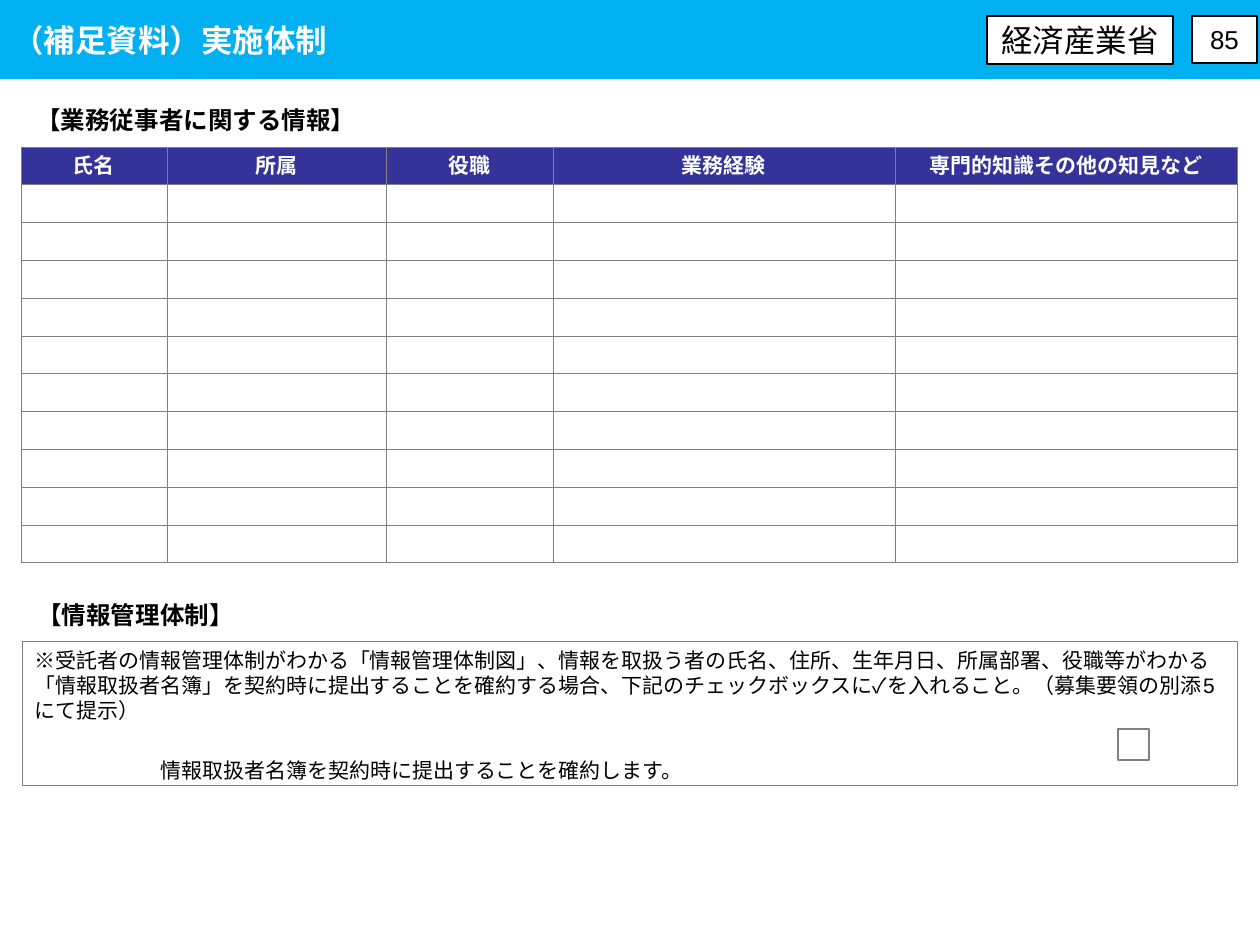
from lxml.etree import SubElement
from pptx import Presentation
from pptx.dml.color import RGBColor
from pptx.enum.shapes import MSO_SHAPE
from pptx.enum.text import MSO_ANCHOR, PP_ALIGN
from pptx.oxml.ns import qn
from pptx.util import Pt

COLORS = {
    "band": "00B0F0",
    "header": "333399",
    "border": "808080",
    "white": "FFFFFF",
    "black": "000000",
}
GOTHIC = "Noto Sans CJK JP"
HEADERS = ["氏名", "所属", "役職", "業務経験", "専門的知識その他の知見など"]
COLUMN_WIDTHS = [146, 219, 167, 342, 343]
STAFF_ROWS = 10
PLEDGE_NOTE = (
    "※受託者の情報管理体制がわかる「情報管理体制図」、情報を取扱う者の氏名、住所、生年月日、"
    "所属部署、役職等がわかる「情報取扱者名簿」を契約時に提出することを確約する場合、"
    "下記のチェックボックスに✓を入れること。（募集要領の別添5にて提示）"
)
PLEDGE = "情報取扱者名簿を契約時に提出することを確約します。"


def px(n):
    return round(n * 914400 / 126)


def rgb(name):
    return RGBColor.from_string(COLORS[name])


def write(p, text, size=12, font="Arial", color="black", bold=False,
          align=PP_ALIGN.LEFT, before=0, indent=0):
    p.alignment = align
    p.space_before = Pt(before)
    if indent:
        p._p.get_or_add_pPr().set("marL", str(px(indent)))
    r = p.add_run()
    r.text = text
    r.font.size = Pt(size)
    r.font.name = font
    r.font.bold = bold
    r.font.color.rgb = rgb(color)
    SubElement(r._r.get_or_add_rPr(), qn("a:ea"), typeface=font)


class SlideBuilder:
    def __init__(self, prs):
        self.s = prs.slides.add_slide(prs.slide_layouts[6])

    def box(self, x, y, w, h, fill=None, line=None, weight=0.75,
            anchor=MSO_ANCHOR.MIDDLE):
        sp = self.s.shapes.add_shape(MSO_SHAPE.RECTANGLE, px(x), px(y), px(w), px(h))
        sp.shadow.inherit = False
        if fill:
            sp.fill.solid()
            sp.fill.fore_color.rgb = rgb(fill)
        else:
            sp.fill.background()
        if line:
            sp.line.color.rgb = rgb(line)
            sp.line.width = Pt(weight)
        else:
            sp.line.fill.background()
        tf = sp.text_frame
        tf.word_wrap = True
        tf.vertical_anchor = anchor
        return tf

    def heading(self, text, x, y, w, h):
        tf = self.s.shapes.add_textbox(px(x), px(y), px(w), px(h)).text_frame
        tf.word_wrap = True
        write(tf.paragraphs[0], text, size=14, font=GOTHIC, bold=True)

    def table(self, x, y, h, headers, widths, body_rows):
        rows = body_rows + 1
        table = self.s.shapes.add_table(
            rows, len(headers), px(x), px(y), px(sum(widths)), px(h)).table
        for column, width in zip(table.columns, widths):
            column.width = px(width)
        for i, row in enumerate(table.rows):
            row.height = px(h) // rows
            for cell, label in zip(row.cells, headers):
                self.cell(cell, label if i == 0 else "")

    def cell(self, cell, label):
        cell.vertical_anchor = MSO_ANCHOR.MIDDLE
        cell.margin_top = cell.margin_bottom = px(2)
        p = cell.text_frame.paragraphs[0]
        tcPr = cell._tc.get_or_add_tcPr()
        for side in ("lnL", "lnR", "lnT", "lnB"):
            ln = SubElement(tcPr, qn(f"a:{side}"), w=str(Pt(0.5)))
            fill = SubElement(ln, qn("a:solidFill"))
            SubElement(fill, qn("a:srgbClr"), val=COLORS["border"])
        if label:
            cell.fill.solid()
            cell.fill.fore_color.rgb = rgb("header")
            write(p, label, color="white", bold=True, align=PP_ALIGN.CENTER)
        else:
            cell.fill.background()
            SubElement(p._p, qn("a:endParaRPr"), sz="1200")


def main():
    prs = Presentation()
    prs.slide_width, prs.slide_height = px(1260), px(945)
    b = SlideBuilder(prs)

    title = b.box(0, 0, 1260, 79, fill="band")
    write(title.paragraphs[0], "（補足資料）実施体制", size=18, font=GOTHIC,
          color="white", bold=True)
    ministry = b.box(987, 16, 186, 48, fill="white", line="black", weight=1)
    write(ministry.paragraphs[0], "経済産業省", size=18, align=PP_ALIGN.CENTER)
    number = b.box(1192, 16, 65, 47, fill="white", line="black")
    write(number.paragraphs[0], "85", size=14.8, align=PP_ALIGN.CENTER)

    b.heading("【業務従事者に関する情報】", 24, 99, 874, 43)
    b.table(21, 147, 416, HEADERS, COLUMN_WIDTHS, STAFF_ROWS)

    b.heading("【情報管理体制】", 25, 594, 1019, 43)
    pledge = b.box(22, 641, 1216, 144, line="border", weight=0.5,
                   anchor=MSO_ANCHOR.TOP)
    write(pledge.paragraphs[0], PLEDGE_NOTE)
    write(pledge.add_paragraph(), PLEDGE, before=20, indent=126)
    b.box(1118, 729, 31, 31, fill="white", line="border")

    prs.save("out.pptx")


if __name__ == "__main__":
    main()
